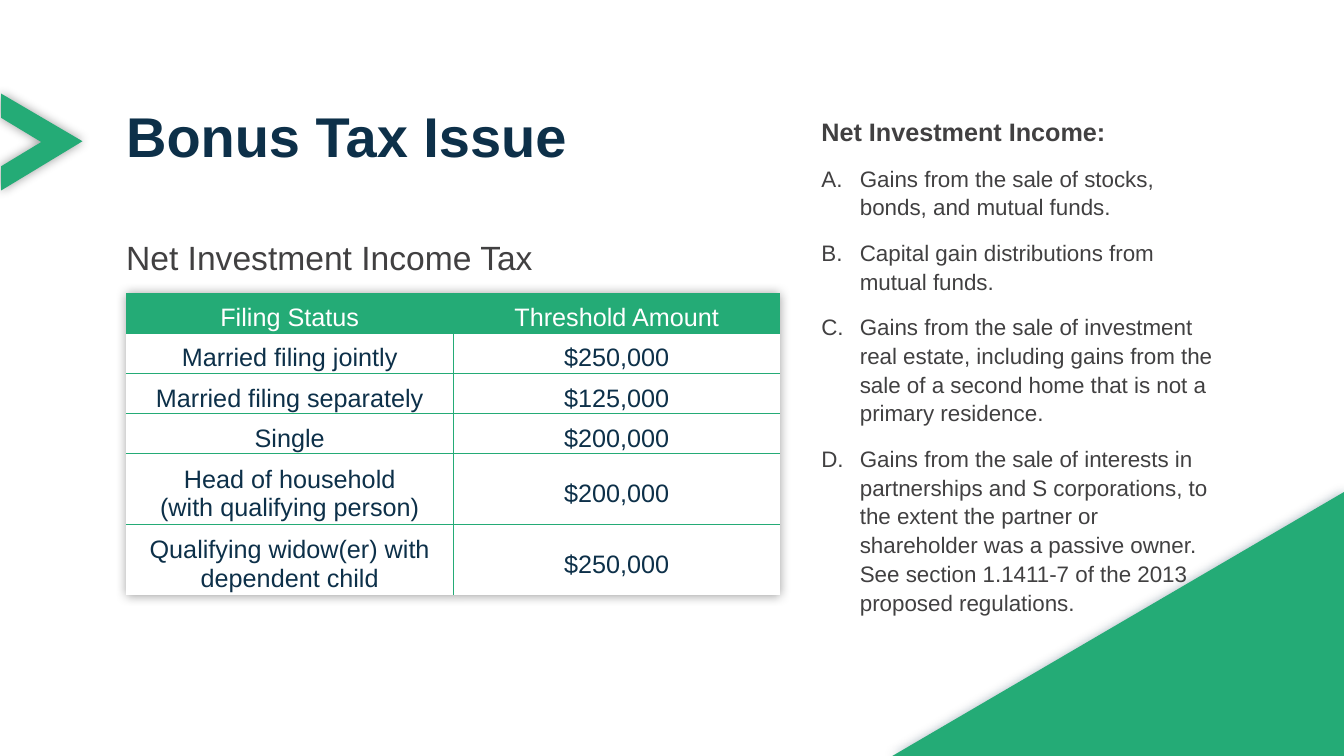
from dataclasses import dataclass

from lxml import etree
from pptx import Presentation
from pptx.dml.color import RGBColor
from pptx.enum.shapes import MSO_SHAPE
from pptx.enum.text import MSO_ANCHOR, PP_ALIGN
from pptx.oxml.ns import qn
from pptx.util import Cm, Pt

TRIANGLE = MSO_SHAPE.RIGHT_TRIANGLE
CENTER = PP_ALIGN.CENTER
MIDDLE = MSO_ANCHOR.MIDDLE


@dataclass(frozen=True)
class Theme:
    font: str = "Arial"
    green: str = "24AB76"
    navy: str = "0D3049"
    gray: str = "414041"
    white: str = "FFFFFF"
    black: str = "000000"
    title: int = 40
    lead: int = 24
    head: int = 18
    body: int = 16


@dataclass(frozen=True)
class Para:
    text: str
    size: int
    color: str
    bold: bool = False
    after: int = 0
    lines: float = 1.0
    listed: bool = False


@dataclass(frozen=True)
class Block:
    left: float
    top: float
    width: float
    height: float
    paras: tuple[Para, ...]


@dataclass(frozen=True)
class Row:
    status: str
    amount: str
    height: float = 0.97


THEME = Theme()
WIDTH, HEIGHT = 33.87, 19.05
LEFT = 3.18
INDENT = 0.97

GAINS = (
    "Gains from the sale of stocks, bonds, and mutual funds.",
    "Capital gain distributions from mutual funds.",
    "Gains from the sale of investment real estate, including gains from "
    "the sale of a second home that is not a primary residence.",
    "Gains from the sale of interests in partnerships and S corporations, "
    "to the extent the partner or shareholder was a passive "
    "owner. See section 1.1411-7 of the 2013 proposed regulations.",
)

BLOCKS = (
    Block(LEFT, 2.82, 13.13, 3.15, (
        Para("Bonus Tax Issue", THEME.title, THEME.navy, True, lines=0.85),)),
    Block(20.7, 2.87, 9.93, 12.83, (
        Para("Net Investment Income:", THEME.head, THEME.gray, True, 12, 1.07),
        *(Para(gain, THEME.body, THEME.gray, False, 12, 1.07, True)
          for gain in GAINS))),
    Block(LEFT, 5.97, 15.88, 0.89, (
        Para("Net Investment Income Tax", THEME.lead, THEME.gray),)),
)

ROWS = (
    Row("Filing Status", "Threshold Amount"),
    Row("Married filing jointly", "$250,000"),
    Row("Married filing separately", "$125,000"),
    Row("Single", "$200,000"),
    Row("Head of household\n(with qualifying person)", "$200,000", 1.68),
    Row("Qualifying widow(er) with dependent child", "$250,000", 1.68),
)


def rgb(color: str) -> RGBColor:
    return RGBColor.from_string(color)


def set_font(para, size: int, color: str, bold: bool = False) -> None:
    font = para.font
    font.name, font.size, font.bold = THEME.font, Pt(size), bold
    font.color.rgb = rgb(color)


def add_glow(effects, color: str) -> None:
    """Soft shadow, 8 pt blur, no offset."""
    glow = etree.SubElement(effects, qn("a:outerShdw"), blurRad=str(Pt(8)),
                            dist="0", dir="0", algn="ctr", rotWithShape="0")
    tone = etree.SubElement(glow, qn("a:srgbClr"), val=color)
    etree.SubElement(tone, qn("a:alpha"), val="40000")


def paint(shape, glow: str) -> None:
    shape.fill.solid()
    shape.fill.fore_color.rgb = rgb(THEME.green)
    shape.line.fill.background()
    shape.shadow.inherit = False
    add_glow(shape._element.spPr.find(qn("a:effectLst")), glow)


def add_decor(slide) -> None:
    # Chevron on the left edge
    points = ((0.03, 2.36), (0.03, 2.97), (1.04, 3.58),
              (0.03, 4.19), (0.03, 4.8), (2.08, 3.56))
    spots = [(Cm(x), Cm(y)) for x, y in points]
    pen = slide.shapes.build_freeform(*spots[0])
    pen.add_line_segments(spots[1:], close=True)
    paint(pen.convert_to_shape(), THEME.black)

    # Corner triangle
    wide, high = 11.38, 6.65
    corner = slide.shapes.add_shape(
        TRIANGLE, Cm(WIDTH - wide), Cm(HEIGHT - high), Cm(wide), Cm(high))
    corner._element.spPr.xfrm.set("flipH", "1")
    paint(corner, THEME.navy)


def add_block(slide, block: Block) -> None:
    box = slide.shapes.add_textbox(Cm(block.left), Cm(block.top),
                                   Cm(block.width), Cm(block.height))
    frame = box.text_frame
    frame.word_wrap = True
    frame.margin_left = frame.margin_right = 0
    frame.margin_top = frame.margin_bottom = 0
    for i, item in enumerate(block.paras):
        para = frame.add_paragraph() if i else frame.paragraphs[0]
        para.text = item.text
        if item.listed:
            props = para._p.get_or_add_pPr()
            props.set("marL", str(Cm(INDENT)))
            props.set("indent", str(-Cm(INDENT)))
            etree.SubElement(props, qn("a:buAutoNum"), type="alphaUcPeriod")
        para.line_spacing = item.lines
        para.space_after = Pt(item.after)
        set_font(para, item.size, item.color, item.bold)


def set_edges(cell, inner: dict[str, bool]) -> None:
    """Green lines on inner edges, none on outer ones."""
    props = cell._tc.get_or_add_tcPr()
    for i, (side, shown) in enumerate(inner.items()):
        line = etree.Element(qn(f"a:ln{side}"), w=str(Pt(1)))
        fill = etree.SubElement(
            line, qn("a:solidFill" if shown else "a:noFill"))
        if shown:
            etree.SubElement(fill, qn("a:srgbClr"), val=THEME.green)
        props.insert(i, line)


def add_grid(slide, rows: tuple[Row, ...]) -> None:
    column = 8.24
    high = sum(row.height for row in rows)
    table = slide.shapes.add_table(len(rows), 2, Cm(LEFT), Cm(7.38),
                                   Cm(2 * column), Cm(high)).table
    table.first_row = table.horz_banding = False
    effects = etree.Element(qn("a:effectLst"))
    add_glow(effects, THEME.black)
    table._tbl.tblPr.insert(0, effects)
    for r, row in enumerate(rows):
        table.rows[r].height = Cm(row.height)
        for c, text in enumerate((row.status, row.amount)):
            cell = table.cell(r, c)
            cell.text = text
            cell.vertical_anchor = MIDDLE
            cell.margin_left = cell.margin_right = cell.margin_top = Cm(0.25)
            cell.margin_bottom = 0
            cell.fill.solid()
            cell.fill.fore_color.rgb = rgb(THEME.white if r else THEME.green)
            set_edges(cell, {"L": c > 0, "R": c < 1,
                             "T": r > 0, "B": r < len(rows) - 1})
            for para in cell.text_frame.paragraphs:
                para.alignment = CENTER
                set_font(para, THEME.head, THEME.navy if r else THEME.white)


def main() -> None:
    deck = Presentation()
    deck.slide_width, deck.slide_height = Cm(WIDTH), Cm(HEIGHT)
    slide = deck.slides.add_slide(deck.slide_layouts[6])
    add_decor(slide)
    for block in BLOCKS:
        add_block(slide, block)
    add_grid(slide, ROWS)
    deck.save("out.pptx")


if __name__ == "__main__":
    main()
